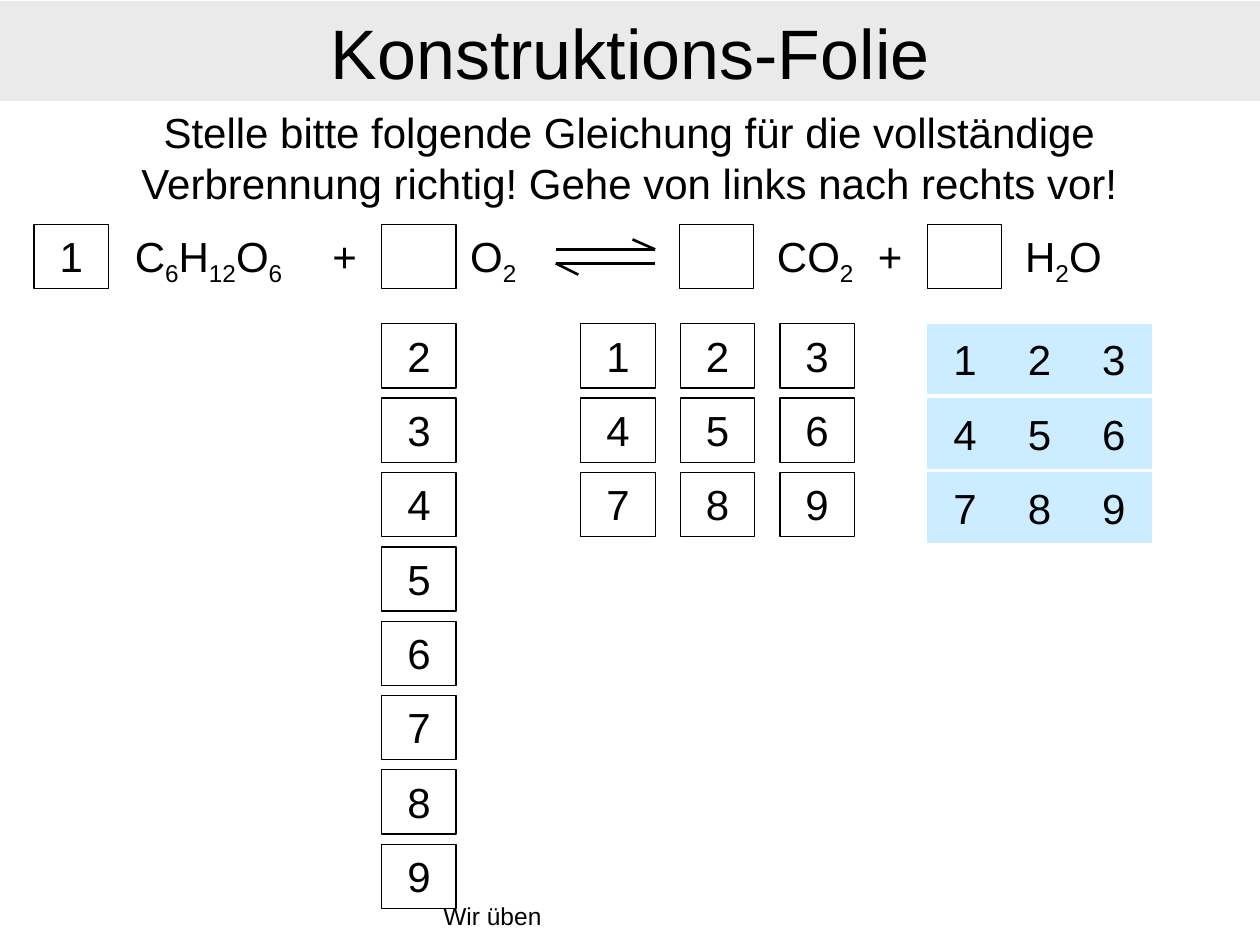
from pptx import Presentation
from pptx.dml.color import RGBColor
from pptx.enum import shapes, text
from pptx.oxml import ns
from pptx.util import Inches, Pt

BLACK = RGBColor(0, 0, 0)
GREY = RGBColor(0xEA, 0xEA, 0xEA)
PALE_BLUE = RGBColor(0xCC, 0xEC, 0xFF)

TITLE = "Konstruktions-Folie"
TASK = ("Stelle bitte folgende Gleichung für die vollständige "
        "Verbrennung richtig! Gehe von links nach rechts vor!")
FOOTER = "Wir üben"

FORMULAS = [
    (0.87, 1.57, ["C", "6", "H", "12", "O", "6"]),
    (2.44, 0.59, ["+"]),
    (3.62, 0.59, ["O", "2"]),
    (5.98, 0.98, ["CO", "2"]),
    (6.77, 0.59, ["+"]),
    (7.95, 0.98, ["H", "2", "O"]),
]
COEFFICIENTS = [(0.27, "1"), (3.03, ""), (5.39, ""), (7.36, "")]
ARROW_STROKES = [
    ((4.41, 1.98), (5.2, 1.98)),
    ((5.2, 1.98), (5.02, 1.9)),
    ((5.2, 2.09), (4.41, 2.09)),
    ((4.41, 2.09), (4.59, 2.18)),
]
OXYGEN_CHOICES = [[str(n)] for n in range(2, 10)]
PRODUCT_CHOICES = ["123", "456", "789"]

EQUATION_TOP, CHOICES_TOP, ROW_STEP = 1.78, 2.57, 0.59
BOX_SIZE = (0.59, 0.51)
BUTTON_SIZE = (0.6, 0.56)

prs = Presentation()
prs.slide_width, prs.slide_height = Inches(10), Inches(7.5)
slide = prs.slides.add_slide(prs.slide_layouts[5])


def write(holder, parts, size=24, align=text.PP_ALIGN.CENTER, anchor=text.MSO_ANCHOR.TOP):
    frame = holder.text_frame
    frame.word_wrap = True
    frame.auto_size = text.MSO_AUTO_SIZE.NONE
    frame.vertical_anchor = anchor
    line = frame.paragraphs[0]
    line.alignment = align
    line.font.size, line.font.name = Pt(size), "Arial"
    line.font.color.rgb = BLACK
    for part in parts:
        run = line.add_run()
        run.text = part
        if part.isdigit() and len(parts) > 1:
            run.font._element.set("baseline", "-25000")


def add_label(left, top, width, height, parts, **style):
    label = slide.shapes.add_textbox(*map(Inches, (left, top, width, height)))
    write(label, parts, **style)


def add_box(left, top, digit):
    box = slide.shapes.add_shape(shapes.MSO_SHAPE.RECTANGLE,
                                 *map(Inches, (left, top, *BOX_SIZE)))
    box.shadow.inherit = False
    box.fill.background()
    box.line.color.rgb, box.line.width = BLACK, Pt(0.75)
    write(box, [digit] if digit else [])


def add_button(left, top, digit):
    button = slide.shapes.add_shape(shapes.MSO_SHAPE.ACTION_BUTTON_CUSTOM,
                                    *map(Inches, (left, top, *BUTTON_SIZE)))
    button.shadow.inherit = False
    button.fill.solid()
    button.fill.fore_color.rgb = PALE_BLUE
    button.line.fill.background()
    write(button, [digit], anchor=text.MSO_ANCHOR.MIDDLE)


def add_choices(add, left, column_step, rows):
    for r, row in enumerate(rows):
        for c, digit in enumerate(row):
            add(left + c * column_step, CHOICES_TOP + r * ROW_STEP, digit)


title = slide.shapes.title
title.left, title.top, title.width, title.height = map(Inches, (0, 0.01, 10, 0.79))
title.fill.solid()
title.fill.fore_color.rgb = GREY
write(title, [TITLE], size=40, anchor=text.MSO_ANCHOR.MIDDLE)

add_label(3.42, 7.1, 3.17, 0.39, [FOOTER], size=14, align=text.PP_ALIGN.LEFT)
add_label(0.27, 0.8, 9.45, 0.9, [TASK])

for left, width, parts in FORMULAS:
    add_label(left, EQUATION_TOP, width, 0.5, parts)
for left, digit in COEFFICIENTS:
    add_box(left, EQUATION_TOP, digit)

equilibrium = slide.shapes.add_group_shape()
for start, end in ARROW_STROKES:
    stroke = equilibrium.shapes.add_connector(
        shapes.MSO_CONNECTOR.STRAIGHT, *map(Inches, start + end))
    stroke.line.color.rgb, stroke.line.width = BLACK, Pt(1.5)
    properties = stroke._element.spPr
    properties.append(properties.makeelement(ns.qn("a:effectLst"), {}))

add_choices(add_box, 3.03, 0, OXYGEN_CHOICES)
add_choices(add_box, 4.61, 0.79, PRODUCT_CHOICES)
add_choices(add_button, 7.36, 0.59, PRODUCT_CHOICES)

prs.save("out.pptx")
